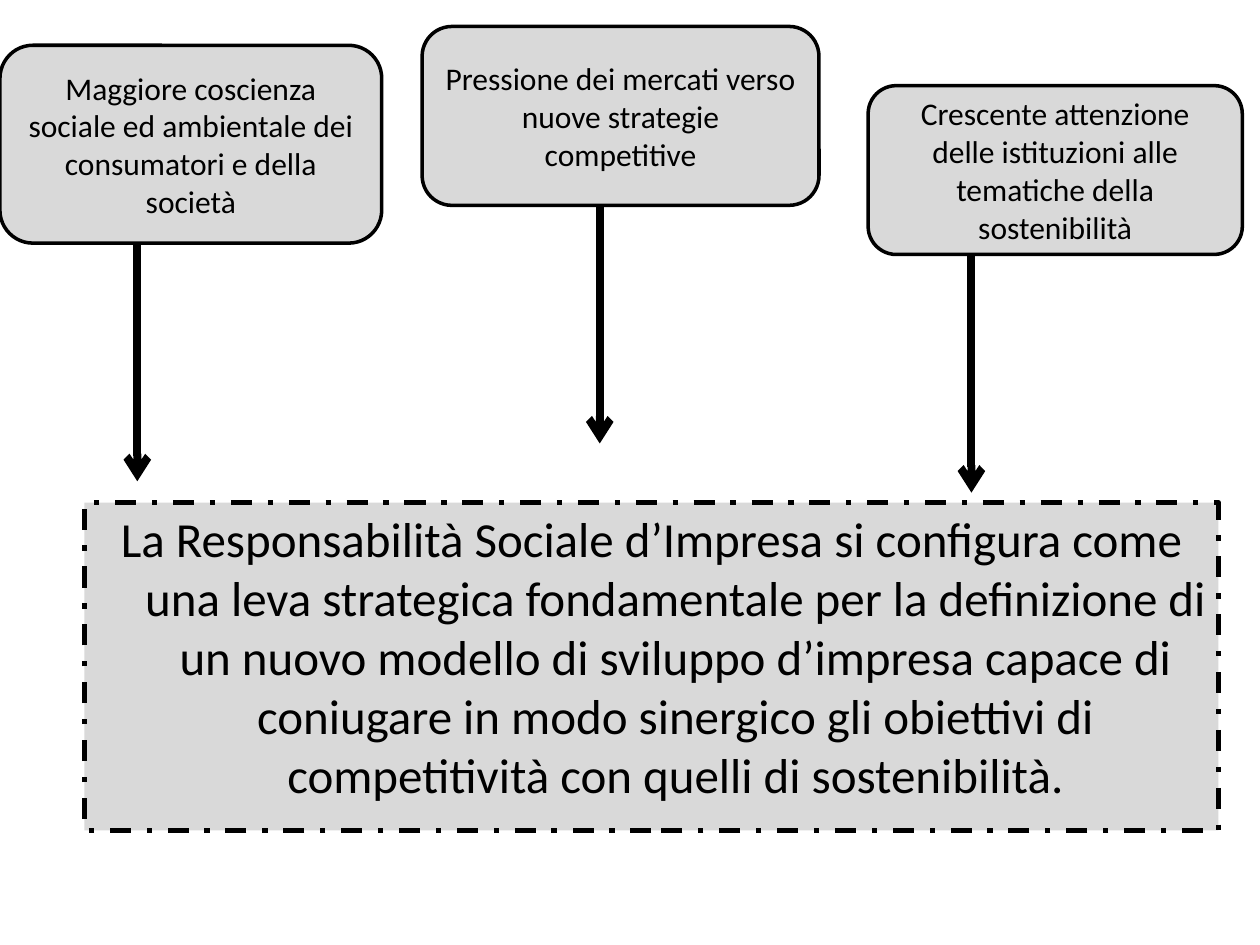
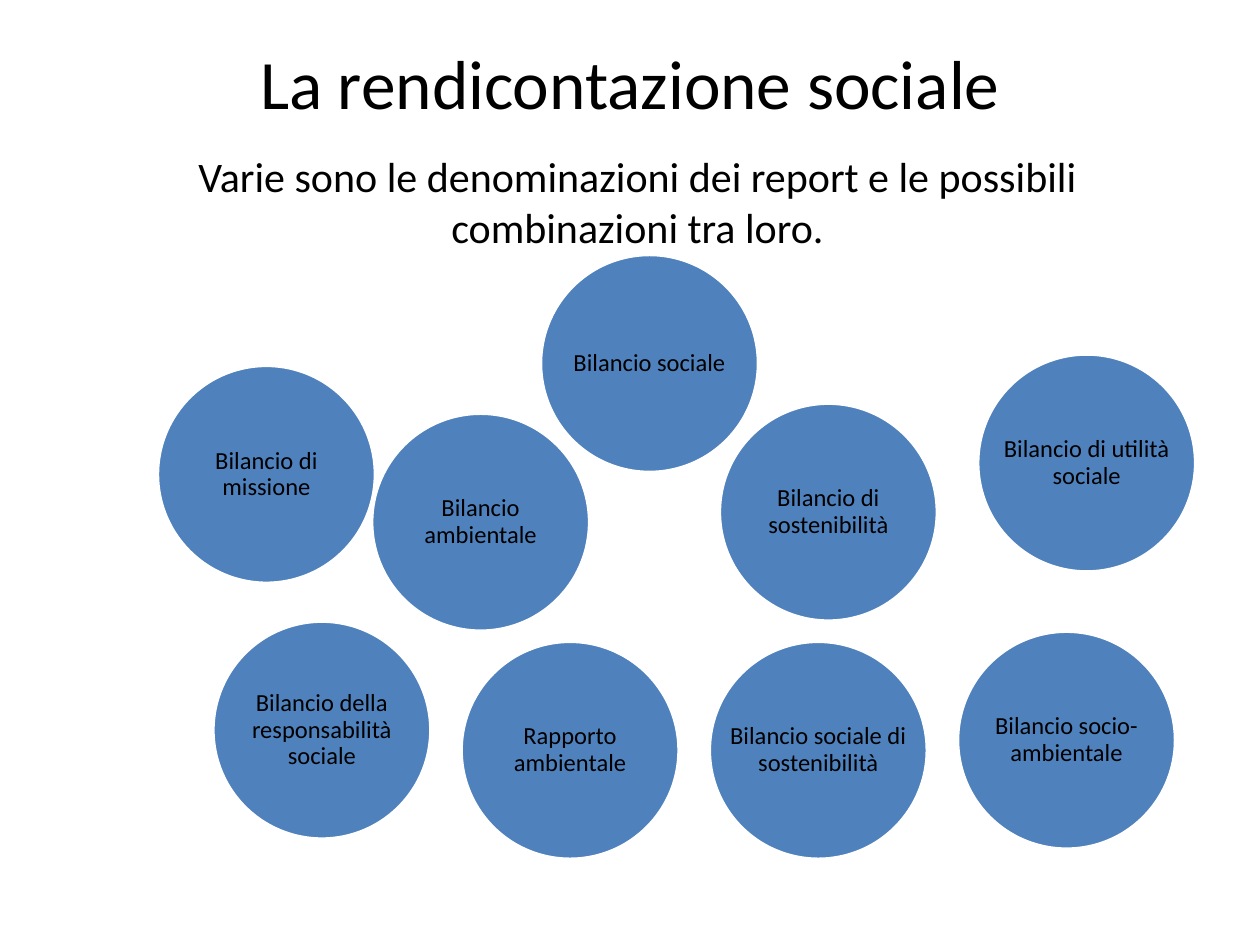
"""Build two slides on social responsibility and social reporting."""
from dataclasses import dataclass

from lxml.etree import SubElement
from pptx import Presentation
from pptx.dml.color import RGBColor
from pptx.enum.dml import MSO_LINE
from pptx.enum.shapes import MSO_CONNECTOR, MSO_SHAPE
from pptx.enum.text import MSO_ANCHOR, PP_ALIGN
from pptx.oxml.ns import qn
from pptx.util import Inches, Pt


@dataclass(frozen=True)
class Theme:
    """Hold the shared colours, font and type sizes."""
    font: str = "Calibri"
    ink: str = "000000"
    panel: str = "D9D9D9"
    circle: str = "4F81BD"
    paper: str = "FFFFFF"
    title_size: float = 39.6
    statement_size: float = 28
    subtitle_size: float = 24
    driver_size: float = 18
    circle_size: float = 14


THEME = Theme()

DRIVERS = [
    {"text": "Pressione dei mercati verso nuove strategie competitive",
     "box": (3.35, 0.21, 3.15, 1.42), "arrow_x": 4.76},
    {"text": "Maggiore coscienza sociale ed ambientale dei consumatori e della società",
     "box": (0, 0.36, 3.03, 1.57), "arrow_x": 1.09},
    {"text": "Crescente attenzione delle istituzioni alle tematiche della sostenibilità",
     "box": (6.89, 0.68, 2.97, 1.34), "arrow_x": 7.71},
]
ARROW_LENGTH = 1.89
STATEMENT = (
    "La Responsabilità Sociale d’Impresa si configura come una leva strategica "
    "fondamentale per la definizione di un nuovo modello di sviluppo d’impresa "
    "capace di coniugare in modo sinergico gli obiettivi di competitività con "
    "quelli di sostenibilità."
)
STATEMENT_BOX = (0.67, 3.99, 9, 2.6)
HANGING_INDENT = 0.38

TITLE = "La rendicontazione sociale"
TITLE_BOX = (0.5, 0.3, 9, 0.69)
SUBTITLE = "Varie sono le denominazioni dei report e le possibili combinazioni tra loro."
SUBTITLE_BOX = (1.14, 1.14, 7.84, 0.91)
DIAMETER = 1.73
UPPER_REPORTS = [
    ("Bilancio di\vsostenibilità", 5.71, 3.2),
    ("Bilancio di utilità\vsociale", 7.76, 2.81),
    ("Bilancio sociale", 4.29, 2.02),
    ("Bilancio\vambientale", 2.95, 3.28),
    ("Bilancio di\vmissione", 1.25, 2.9),
]
LOWER_REPORTS = [
    ("Bilancio della\vresponsabilità\vsociale", 4.93),
    ("Rapporto\vambientale", 5.09),
    ("Bilancio sociale di\vsostenibilità", 5.09),
    ("Bilancio socio-\vambientale", 5.01),
]
LOWER_LEFT, LOWER_STEP = 1.69, 1.97


def apply_format(target, values):
    """Set each named attribute on the target."""
    for name, value in values.items():
        setattr(target, name, value)


def write_text(shape, text, size, frame_format=None, paragraph_format=None):
    """Fill a shape with one centred paragraph and return it."""
    frame = shape.text_frame
    apply_format(frame, {"word_wrap": True, "vertical_anchor": MSO_ANCHOR.MIDDLE,
                         **(frame_format or {})})
    paragraph = frame.paragraphs[0]
    paragraph.text = text
    apply_format(paragraph, {"alignment": PP_ALIGN.CENTER, **(paragraph_format or {})})
    for run in paragraph.runs:
        apply_format(run.font, {"name": THEME.font, "size": Pt(size)})
        run.font.color.rgb = RGBColor.from_string(THEME.ink)
    return paragraph


def add_panel(slide, kind, box, fill, line, width):
    """Add a filled, outlined preset shape."""
    shape = slide.shapes.add_shape(kind, *map(Inches, box))
    shape.shadow.inherit = False
    shape.fill.solid()
    shape.fill.fore_color.rgb = RGBColor.from_string(fill)
    shape.line.color.rgb = RGBColor.from_string(line)
    shape.line.width = Pt(width)
    return shape


def add_down_arrow(slide, x, top):
    """Add a vertical arrow of the shared length."""
    arrow = slide.shapes.add_connector(
        MSO_CONNECTOR.STRAIGHT, *map(Inches, (x, top, x, top + ARROW_LENGTH)))
    arrow.line.color.rgb = RGBColor.from_string(THEME.ink)
    arrow.line.width = Pt(4.5)
    SubElement(arrow.line._get_or_add_ln(), qn("a:tailEnd"), type="arrow")
    SubElement(arrow._element.spPr, qn("a:effectLst"))


def build_drivers_slide(slide):
    """Show three drivers leading to the statement."""
    statement = add_panel(slide, MSO_SHAPE.RECTANGLE, STATEMENT_BOX,
                          THEME.panel, THEME.ink, 3)
    statement.line.dash_style = MSO_LINE.DASH_DOT
    paragraph = write_text(statement, STATEMENT, THEME.statement_size,
                           {"vertical_anchor": MSO_ANCHOR.TOP},
                           {"space_before": Pt(THEME.statement_size * 0.2)})
    properties = paragraph._p.get_or_add_pPr()
    properties.set("marL", str(Inches(HANGING_INDENT)))
    properties.set("indent", str(-Inches(HANGING_INDENT)))

    for driver in DRIVERS:
        panel = add_panel(slide, MSO_SHAPE.ROUNDED_RECTANGLE, driver["box"],
                          THEME.panel, THEME.ink, 2)
        write_text(panel, driver["text"], THEME.driver_size)
    for driver in DRIVERS:
        _, top, _, height = driver["box"]
        add_down_arrow(slide, driver["arrow_x"], top + height)


def build_reports_slide(slide):
    """Show the names of the social reports as circles."""
    title = slide.shapes.add_textbox(*map(Inches, TITLE_BOX))
    write_text(title, TITLE, THEME.title_size)

    lower = [(name, LOWER_LEFT + index * LOWER_STEP, top)
             for index, (name, top) in enumerate(LOWER_REPORTS)]
    margins = {f"margin_{side}": 0 for side in ("left", "top", "right", "bottom")}
    for name, left, top in UPPER_REPORTS + lower:
        circle = add_panel(slide, MSO_SHAPE.OVAL, (left, top, DIAMETER, DIAMETER),
                           THEME.circle, THEME.paper, 2)
        write_text(circle, name, THEME.circle_size,
                   {"word_wrap": False, **margins}, {"line_spacing": 0.9})

    subtitle = slide.shapes.add_textbox(*map(Inches, SUBTITLE_BOX))
    write_text(subtitle, SUBTITLE, THEME.subtitle_size)


def main():
    """Create and save the presentation."""
    presentation = Presentation()
    apply_format(presentation, {"slide_width": Inches(10), "slide_height": Inches(7.5)})
    for build in (build_drivers_slide, build_reports_slide):
        build(presentation.slides.add_slide(presentation.slide_layouts[6]))
    presentation.save("out.pptx")


if __name__ == "__main__":
    main()
